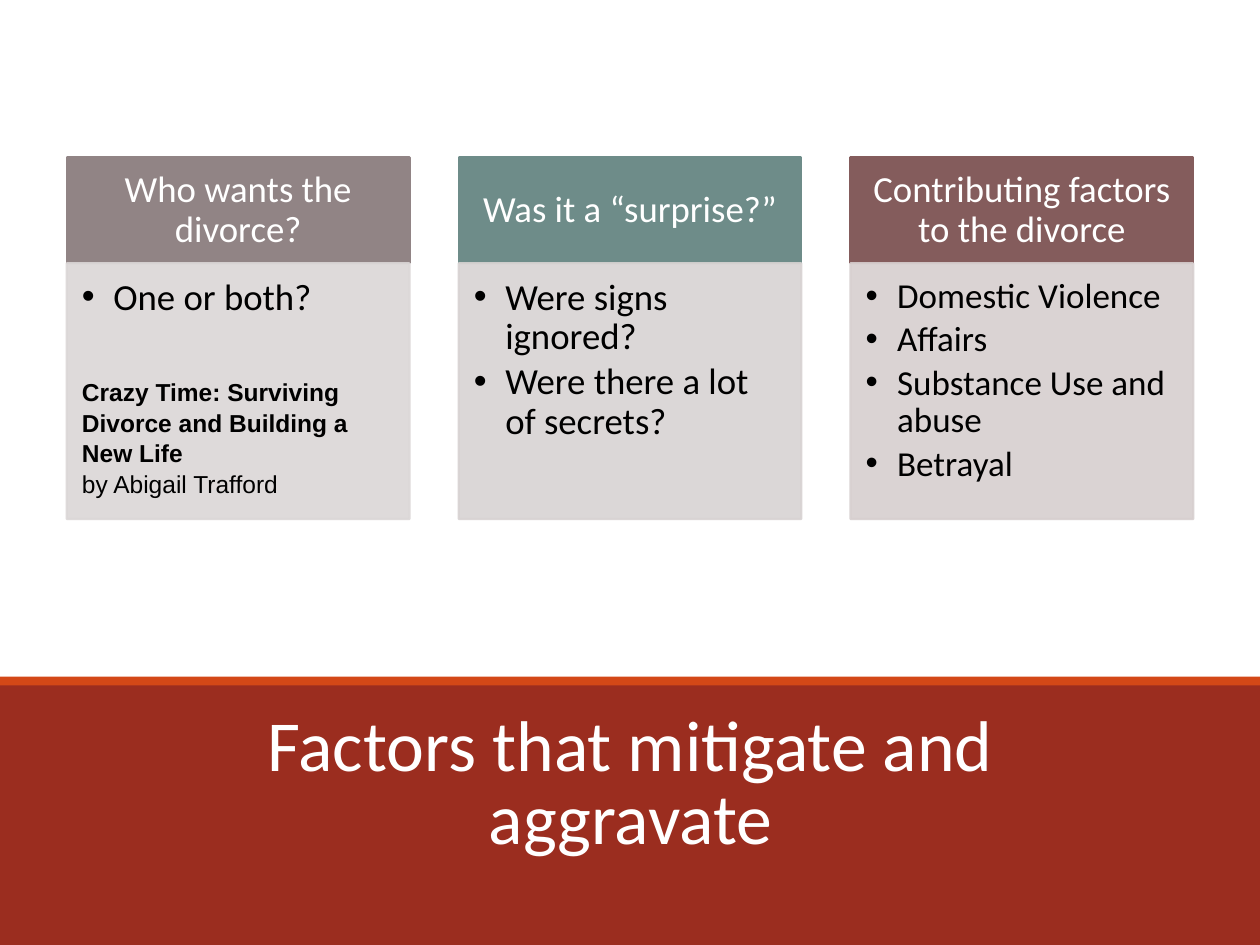
import pptx
import pptx.dml.color
import pptx.enum.shapes
import pptx.enum.text
import pptx.oxml.ns
import pptx.util
from lxml import etree

RGB = pptx.dml.color.RGBColor
ALIGN = pptx.enum.text.PP_ALIGN
ANCHOR = pptx.enum.text.MSO_ANCHOR
Pt, Inches = pptx.util.Pt, pptx.util.Inches
qn = pptx.oxml.ns.qn

WHITE = RGB(0xFF, 0xFF, 0xFF)
BLACK = RGB(0x00, 0x00, 0x00)
BRICK = RGB(0x9B, 0x2D, 0x1F)
ORANGE = RGB(0xD3, 0x48, 0x17)
TAUPE, TAUPE_TINT = RGB(0x91, 0x84, 0x85), RGB(0xDB, 0xD7, 0xD7)
TEAL, TEAL_TINT = RGB(0x6E, 0x8C, 0x89), RGB(0xD8, 0xD3, 0xD3)
MAROON, MAROON_TINT = RGB(0x84, 0x5C, 0x5C), RGB(0xD7, 0xCF, 0xCF)

WIDTH, HEIGHT = Inches(10), Inches(7.5)

# Card grid, in inches
MARGIN, GAP, COLUMNS = 0.53, 0.39, 3
CARD_WIDTH = (10 - 2 * MARGIN - (COLUMNS - 1) * GAP) / COLUMNS
HEADER_TOP, HEADER_HEIGHT, BODY_HEIGHT = 1.25, 0.84, 2.03

HEADER_TEXT = {"size": Pt(21), "name": "Calibri", "bold": False}
BOOK_TEXT = {"size": Pt(14), "name": "Arial", "bold": True}
AUTHOR_TEXT = {**BOOK_TEXT, "bold": False}


def assign(target, values):
    for name, value in values.items():
        setattr(target, name, value)


class Deck:
    """Holds the style and the current slide."""

    def __init__(self):
        self.presentation = pptx.Presentation()
        assign(self.presentation, {"slide_width": WIDTH, "slide_height": HEIGHT})
        self.slide = self.presentation.slides.add_slide(
            self.presentation.slide_layouts[5])

    def frame(self, shape, insets, anchor):
        frame = shape.text_frame
        sides = ("margin_left", "margin_top", "margin_right", "margin_bottom")
        assign(frame, dict(zip(sides, map(Inches, insets))))
        assign(frame, {"word_wrap": True, "vertical_anchor": anchor,
                       "auto_size": pptx.enum.text.MSO_AUTO_SIZE.NONE})
        return frame

    def paragraph(self, frame, text, font, color, **layout):
        paragraph = frame.paragraphs[0]
        if paragraph.runs:
            paragraph = frame.add_paragraph()
        assign(paragraph, layout)
        run = paragraph.add_run()
        run.text = text
        assign(run.font, font)
        run.font.color.rgb = color
        return paragraph

    def rectangle(self, left, top, width, height, color, outlined=False, alpha=None):
        shape = self.slide.shapes.add_shape(
            pptx.enum.shapes.MSO_SHAPE.RECTANGLE, *map(Inches, (left, top, width, height)))
        shape.shadow.inherit = False
        shape.fill.solid()
        shape.fill.fore_color.rgb = color
        if outlined:
            shape.line.color.rgb = color
            shape.line.width = Pt(1.25)
        else:
            shape.line.fill.background()
        if alpha:
            for swatch in shape._element.spPr.iter(qn("a:srgbClr")):
                etree.SubElement(swatch, qn("a:alpha"), val=str(alpha * 1000))
        return shape

    def title(self, text):
        title = self.slide.shapes.title
        assign(title, {"left": Inches(0.88), "top": Inches(5.74),
                       "width": Inches(8.25), "height": Inches(1.13)})
        frame = self.frame(title, (0.1, 0.05, 0.1, 0.05), ANCHOR.BOTTOM)
        self.paragraph(frame, text, {"size": Pt(41), "name": "Calibri"}, WHITE,
                       alignment=ALIGN.CENTER, line_spacing=0.85)
        # Bring the title in front of the band
        self.slide.shapes._spTree.append(title._element)

    def bullet(self, frame, text, size, space_before):
        paragraph = self.paragraph(
            frame, text, {"size": Pt(size), "name": "Calibri"}, BLACK, level=1,
            alignment=ALIGN.LEFT, line_spacing=0.9, space_before=Pt(space_before))
        properties = paragraph._p.get_or_add_pPr()
        properties.set("marL", str(Inches(0.25)))
        properties.set("indent", str(Inches(-0.25)))
        etree.SubElement(properties, qn("a:buFont"), typeface="Arial")
        etree.SubElement(properties, qn("a:buChar"), char="•")

    def card(self, column, heading, color, tint, bullets, size):
        left = MARGIN + column * (CARD_WIDTH + GAP)
        header = self.rectangle(left, HEADER_TOP, CARD_WIDTH, HEADER_HEIGHT, color, True)
        self.paragraph(self.frame(header, (0.16, 0.09, 0.16, 0.09), ANCHOR.MIDDLE),
                       heading, HEADER_TEXT, WHITE,
                       alignment=ALIGN.CENTER, line_spacing=0.9)
        body = self.rectangle(left, HEADER_TOP + HEADER_HEIGHT, CARD_WIDTH,
                              BODY_HEIGHT, tint, True, alpha=90)
        frame = self.frame(body, (0.12, 0.12, 0.16, 0.18), ANCHOR.TOP)
        for index, text in enumerate(bullets):
            self.bullet(frame, text, size, 3.1 if index else 0)
        return frame

    def book(self, frame, name, author):
        for text, font, gap in ((name, BOOK_TEXT, 33), (author, AUTHOR_TEXT, 0)):
            self.paragraph(frame, text, font, BLACK, alignment=ALIGN.LEFT,
                           line_spacing=1.04, space_before=Pt(gap))


def main():
    deck = Deck()

    # Title band
    deck.rectangle(0, 5.42, 10, 2.08, BRICK)
    deck.title("Factors that mitigate and aggravate")
    deck.rectangle(0, 5.37, 10, 0.07, ORANGE)

    # Three factor cards
    who_wants = deck.card(0, "Who wants the divorce?", TAUPE, TAUPE_TINT,
                          ["One or both?"], 21)
    deck.book(who_wants, "Crazy Time: Surviving Divorce and Building a New Life",
              "by Abigail Trafford")
    deck.card(1, "Was it a “surprise?”", TEAL, TEAL_TINT,
              ["Were signs ignored?", "Were there a lot of secrets?"], 21)
    deck.card(2, "Contributing factors to the divorce", MAROON, MAROON_TINT,
              ["Domestic Violence", "Affairs", "Substance Use and abuse", "Betrayal"], 20)

    deck.presentation.save("out.pptx")


if __name__ == "__main__":
    main()
